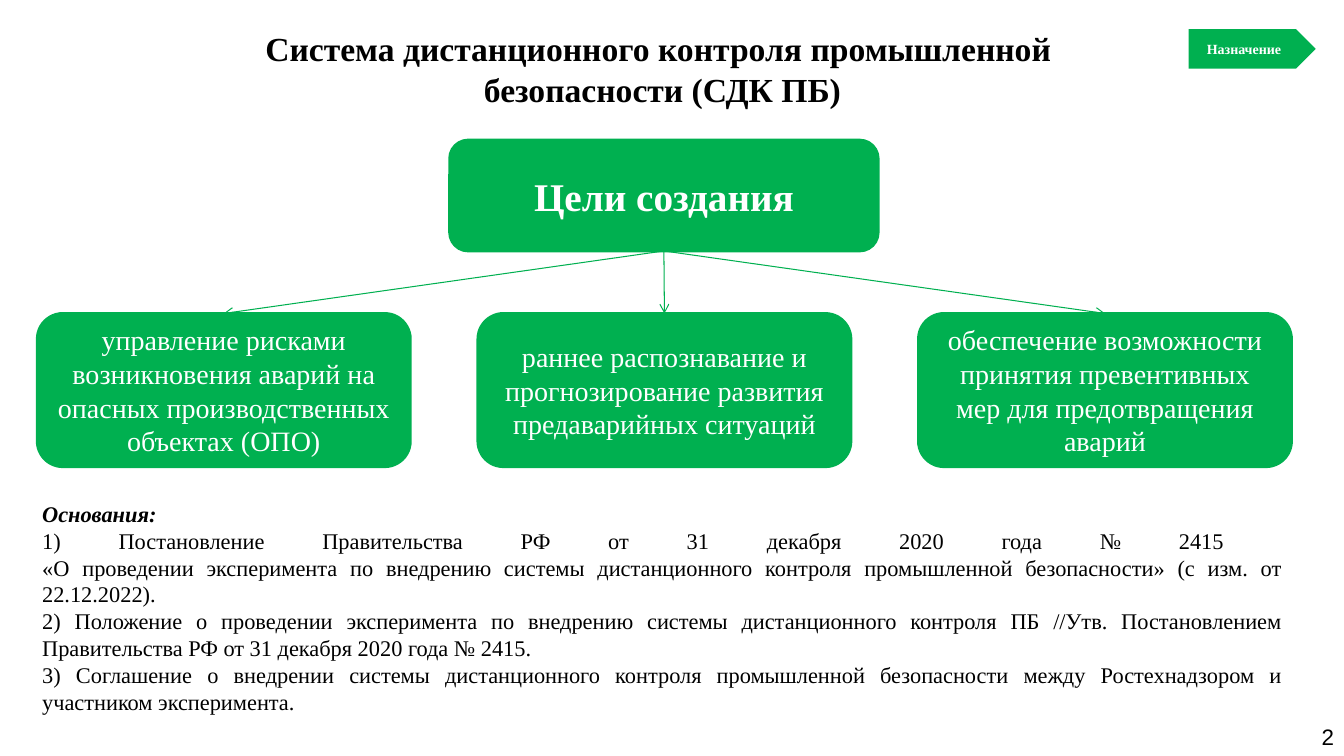
from lxml import etree
from pptx import Presentation
from pptx.dml.color import RGBColor
from pptx.enum.shapes import MSO_CONNECTOR, MSO_SHAPE
from pptx.enum.text import MSO_ANCHOR, PP_ALIGN
from pptx.oxml.ns import qn
from pptx.util import Inches, Pt

GREEN = RGBColor(0x00, 0xB0, 0x50)
WHITE = RGBColor(0xFF, 0xFF, 0xFF)
BLACK = RGBColor(0x00, 0x00, 0x00)
SERIF = "Times New Roman"
ROUNDED, PENTAGON = MSO_SHAPE.ROUNDED_RECTANGLE, MSO_SHAPE.PENTAGON
STRAIGHT = MSO_CONNECTOR.STRAIGHT
MIDDLE = MSO_ANCHOR.MIDDLE
LEFT, CENTER, RIGHT, JUSTIFY = (
    PP_ALIGN.LEFT, PP_ALIGN.CENTER, PP_ALIGN.RIGHT, PP_ALIGN.JUSTIFY)
TOP_SITE, BOTTOM_SITE = 0, 2

TITLE = ["Система дистанционного контроля промышленной ",
         "безопасности (СДК ПБ)"]
GOALS = [
    "управление рисками возникновения аварий на опасных "
    "производственных объектах (ОПО)",
    "раннее распознавание и прогнозирование развития предаварийных ситуаций",
    "обеспечение возможности принятия превентивных мер "
    "для предотвращения аварий",
]
GROUNDS = [
    "Основания:",
    "1) Постановление Правительства РФ от 31 декабря 2020 года № 2415 \v"
    "«О проведении эксперимента по внедрению системы дистанционного контроля "
    "промышленной безопасности» (с изм. от 22.12.2022).",
    "2) Положение о проведении эксперимента по внедрению системы "
    "дистанционного контроля ПБ //Утв. Постановлением Правительства РФ "
    "от 31 декабря 2020 года № 2415. ",
    "3) Соглашение о внедрении системы дистанционного контроля промышленной "
    "безопасности между Ростехнадзором и участником эксперимента.",
]


def write(frame, lines, size, color, align, bold=False, font=SERIF):
    frame.word_wrap = True
    for index, line in enumerate(lines):
        para = frame.add_paragraph() if index else frame.paragraphs[0]
        para.text = line
        para.alignment = align
        para.font.name = font
        para.font.size = Pt(size)
        para.font.bold = bold
        para.font.color.rgb = color


def add_text(page, place, lines, size, align, **style):
    box = page.shapes.add_textbox(*map(Inches, place))
    write(box.text_frame, lines, size, BLACK, align, **style)
    return box.text_frame


def add_green_shape(page, kind, place, text, size, align=CENTER, bold=False):
    shape = page.shapes.add_shape(kind, *map(Inches, place))
    shape.shadow.inherit = False
    shape.fill.solid()
    shape.fill.fore_color.rgb = GREEN
    shape.line.color.rgb = GREEN
    shape.line.width = Pt(2)
    shape.text_frame.vertical_anchor = MIDDLE
    write(shape.text_frame, [text], size, WHITE, align, bold)
    return shape


def add_arrow(page, source, target):
    arrow = page.shapes.add_connector(STRAIGHT, 0, 0, 0, 0)
    arrow.begin_connect(source, BOTTOM_SITE)
    arrow.end_connect(target, TOP_SITE)
    arrow.line.color.rgb = GREEN
    arrow.line.width = Pt(0.75)
    etree.SubElement(arrow.line._get_or_add_ln(), qn("a:tailEnd"), type="arrow")
    etree.SubElement(arrow._element.spPr, qn("a:effectLst"))


def main():
    deck = Presentation()
    deck.slide_width, deck.slide_height = Inches(13.33), Inches(7.5)
    page = deck.slides.add_slide(deck.slide_layouts[6])

    # Title
    add_text(page, (0.35, 0.23, 12.44, 0.91), TITLE, 24, CENTER, bold=True)

    # Legal grounds under the diagram
    grounds = add_text(page, (0.32, 4.62, 12.5, 2.88), GROUNDS, 16, JUSTIFY)
    grounds.margin_top = Inches(0.34)
    heading = grounds.paragraphs[0].font
    heading.bold = heading.italic = True

    # Page number
    add_text(page, (11.34, 7.13, 1.99, 0.37), ["2"], 16, RIGHT, font="Arial")

    # Goals diagram
    root = add_green_shape(page, ROUNDED, (4.46, 1.39, 4.25, 1.1),
                           "Цели создания", 28, bold=True)
    goals = [add_green_shape(page, ROUNDED, (0.37 + 4.37 * column, 3.11, 3.7, 1.52),
                             text, 20)
             for column, text in enumerate(GOALS)]
    for goal in goals:
        add_arrow(page, root, goal)

    # Section tag
    tag = add_green_shape(page, PENTAGON, (11.79, 0.29, 1.26, 0.39),
                          "Назначение", 10, LEFT, bold=True)
    tag.line.fill.background()
    tag.text_frame.margin_left = Inches(0.18)
    tag.text_frame.margin_right = Inches(0.03)

    deck.save("out.pptx")


if __name__ == "__main__":
    main()
